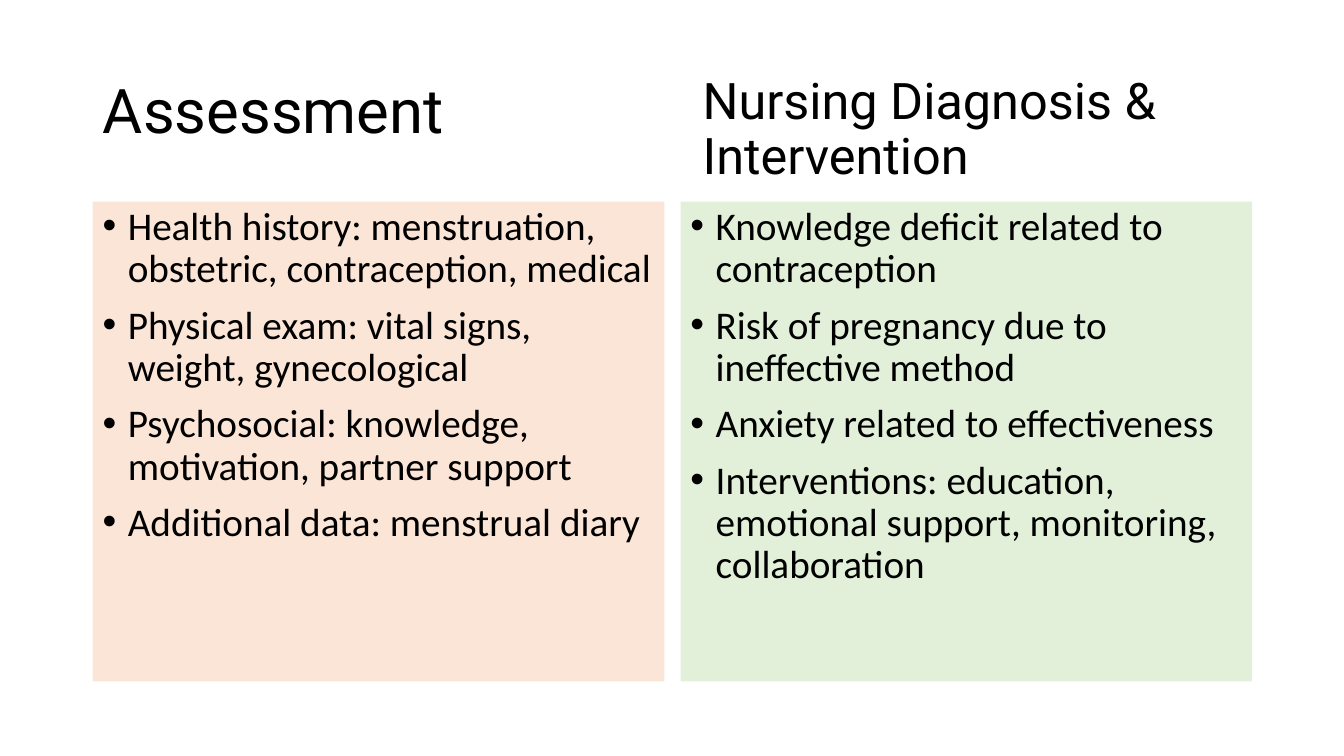
from dataclasses import dataclass

import lxml.etree
import pptx
import pptx.dml.color
import pptx.enum.text
import pptx.oxml.ns
import pptx.slide
import pptx.text.text
import pptx.util


@dataclass(frozen=True)
class Theme:
    ink: str = "000000"
    peach: str = "FBE5D6"
    green: str = "E2F0D9"
    head_font: str = "Roboto"
    body_font: str = "Calibri"
    title_size: int = 44
    head_size: int = 36
    body_size: int = 28
    line_gap: float = 0.9
    item_gap: int = 10


@dataclass(frozen=True)
class Box:
    left: float
    top: float
    width: float
    height: float

    def sizes(self) -> tuple[pptx.util.Length, ...]:
        return tuple(
            pptx.util.Inches(n) for n in (self.left, self.top, self.width, self.height)
        )


@dataclass(frozen=True)
class Panel:
    fill: str
    items: tuple[str, ...]


THEME = Theme()
LEFT, TOP, WIDTH, HEIGHT, STEP = 0.92, 2, 5.67, 4.76, 5.83
TITLE_BOX = Box(LEFT, 0.4, 11.5, 1.45)
HEAD_BOX = Box(6.87, 0.57, 6.41, 1.45)
PANELS = (
    Panel(THEME.peach, (
        "Health history: menstruation, obstetric, contraception, medical",
        "Physical exam: vital signs, weight, gynecological",
        "Psychosocial: knowledge, motivation, partner support",
        "Additional data: menstrual diary",
    )),
    Panel(THEME.green, (
        "Knowledge deficit related to contraception",
        "Risk of pregnancy due to ineffective method",
        "Anxiety related to effectiveness",
        "Interventions: education, emotional support, monitoring, collaboration",
    )),
)


def color(code: str) -> pptx.dml.color.RGBColor:
    return pptx.dml.color.RGBColor.from_string(code)


def set_frame(
    frame: pptx.text.text.TextFrame, anchor: pptx.enum.text.MSO_ANCHOR
) -> None:
    frame.word_wrap = True
    frame.auto_size = pptx.enum.text.MSO_AUTO_SIZE.NONE
    frame.vertical_anchor = anchor


def write(para: pptx.text.text._Paragraph, text: str, font: str, size: int) -> None:
    para.alignment = pptx.enum.text.PP_ALIGN.LEFT
    para.line_spacing = THEME.line_gap
    run = para.add_run()
    run.text = text
    run.font.name = font
    run.font.size = pptx.util.Pt(size)
    run.font.color.rgb = color(THEME.ink)


def add_bullet(para: pptx.text.text._Paragraph) -> None:
    props = para._p.get_or_add_pPr()
    indent = pptx.util.Inches(0.25)
    props.set("marL", str(indent))
    props.set("indent", str(-indent))
    for tag, key, value in (("a:buFont", "typeface", "Arial"), ("a:buChar", "char", "•")):
        mark = lxml.etree.SubElement(props, pptx.oxml.ns.qn(tag))
        mark.set(key, value)


def draw_head(frame: pptx.text.text.TextFrame, text: str, size: int) -> None:
    set_frame(frame, pptx.enum.text.MSO_ANCHOR.MIDDLE)
    write(frame.paragraphs[0], text, THEME.head_font, size)


def draw_panel(slide: pptx.slide.Slide, panel: Panel, box: Box) -> None:
    shape = slide.shapes.add_textbox(*box.sizes())
    shape.fill.solid()
    shape.fill.fore_color.rgb = color(panel.fill)
    frame = shape.text_frame
    set_frame(frame, pptx.enum.text.MSO_ANCHOR.TOP)
    for index, item in enumerate(panel.items):
        para = frame.add_paragraph() if index else frame.paragraphs[0]
        add_bullet(para)
        if index:
            para.space_before = pptx.util.Pt(THEME.item_gap)
        write(para, item, THEME.body_font, THEME.body_size)


def main() -> None:
    deck = pptx.Presentation()
    deck.slide_width = pptx.util.Inches(13.33)
    deck.slide_height = pptx.util.Inches(7.5)
    slide = deck.slides.add_slide(deck.slide_layouts.get_by_name("Title Only"))
    title = slide.shapes.title
    title.left, title.top, title.width, title.height = TITLE_BOX.sizes()
    draw_head(title.text_frame, "Assessment", THEME.title_size)
    for index, panel in enumerate(PANELS):
        draw_panel(slide, panel, Box(LEFT + index * STEP, TOP, WIDTH, HEIGHT))
    head = slide.shapes.add_textbox(*HEAD_BOX.sizes())
    draw_head(head.text_frame, "Nursing Diagnosis & Intervention", THEME.head_size)
    deck.save("out.pptx")


if __name__ == "__main__":
    main()
